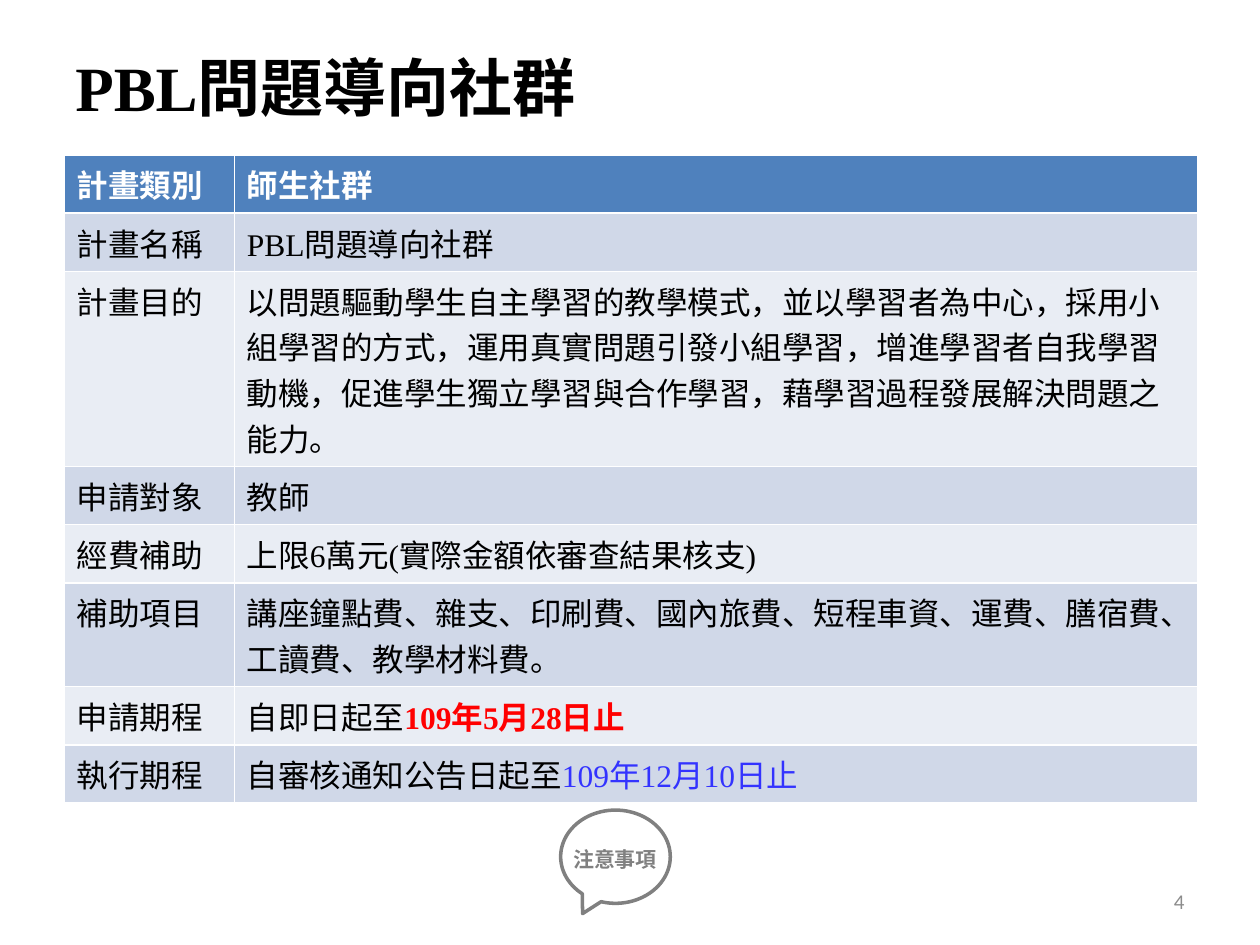
from dataclasses import dataclass
from pptx import Presentation
from pptx.dml.color import RGBColor as Rgb
from pptx.enum.shapes import MSO_SHAPE as Shape
from pptx.enum.text import MSO_ANCHOR as Anchor, PP_ALIGN as Align
from pptx.util import Inches, Pt


@dataclass(frozen=True)
class Theme:
    serif: str = "Times New Roman"
    sans: str = "Calibri"
    cjk: str = "Noto Sans CJK SC"
    black: str = "000000"
    white: str = "FFFFFF"
    gray: str = "808080"
    pale: str = "8C8C8C"
    red: str = "FF0000"
    blue: str = "3333FF"
    head: str = "4F81BD"
    bands: tuple = ("E9EDF4", "D0D8E8")
    title: int = 36
    body: int = 18
    small: int = 12


class Deck:
    """Draws styled elements on the current slide."""

    def __init__(self, theme):
        self.theme = theme
        self.file = Presentation()
        self.file.slide_width, self.file.slide_height = Inches(10), Inches(7.5)
        self.slide = self.file.slides.add_slide(self.file.slide_layouts[6])

    def style(self, font, name, size, color, bold=False):
        font.name, font.size, font.bold = name, Pt(size), bold
        font.color.rgb = Rgb.from_string(color)

    def text(self, home, box, words, name, size, color, bold=False,
             align=Align.LEFT, anchor=Anchor.MIDDLE, wrap=True):
        frame = home.add_textbox(*map(Inches, box)).text_frame
        frame.word_wrap, frame.vertical_anchor = wrap, anchor
        para = frame.paragraphs[0]
        para.text, para.alignment = words, align
        self.style(para.font, name, size, color, bold)

    def cell(self, cell, fill, color, bold, words, accent=None):
        cell.fill.solid()
        cell.fill.fore_color.rgb = Rgb.from_string(fill)
        para = cell.text_frame.paragraphs[0]
        para.text = words
        self.style(para.font, self.theme.serif, self.theme.body, color, bold)
        if accent:
            tail, tint, strong = accent
            run = para.add_run()
            run.text = tail
            run.font.bold = strong
            run.font.color.rgb = Rgb.from_string(tint)

    def table(self, spot, widths, rows):
        t = self.theme
        size = sum(widths), sum(row[0] for row in rows)
        grid = self.slide.shapes.add_table(
            len(rows), len(widths), *map(Inches, spot + size)).table
        for col, width in zip(grid.columns, widths):
            col.width = Inches(width)
        for i, (high, label, *value) in enumerate(rows):
            grid.rows[i].height = Inches(high)
            top = i == 0
            look = (t.head if top else t.bands[i % 2], t.white if top else t.black, top)
            self.cell(grid.cell(i, 0), *look, label)
            self.cell(grid.cell(i, 1), *look, *value)

    def bubble(self, box, words):
        t = self.theme
        home = self.slide.shapes.add_group_shape().shapes
        left, top, width, _ = box
        self.text(home, (left, top + 0.24, width, 0.3), words, t.cjk, t.small,
                  t.gray, True, anchor=Anchor.TOP, wrap=False)
        shape = home.add_shape(Shape.OVAL_CALLOUT, *map(Inches, box))
        shape.adjustments[0], shape.adjustments[1] = -0.3, 0.61
        shape.shadow.inherit = False
        shape.fill.background()
        shape.line.color.rgb = Rgb.from_string(t.gray)
        shape.line.width = Pt(2)


def main():
    t = Theme()
    deck = Deck(t)
    name = "PBL問題導向社群"
    row = 0.41
    deck.table((0.51, 1.23), (1.35, 7.65), [
        (row, "計畫類別", "師生社群"),
        (row, "計畫名稱", name),
        (1.34, "計畫目的", "以問題驅動學生自主學習的教學模式，並以學習者為中心，"
         "採用小組學習的方式，運用真實問題引發小組學習，增進學習者自我學習動機，"
         "促進學生獨立學習與合作學習，藉學習過程發展解決問題之能力。"),
        (row, "申請對象", "教師"),
        (row, "經費補助", "上限6萬元(實際金額依審查結果核支)"),
        (0.72, "補助項目", "講座鐘點費、雜支、印刷費、國內旅費、短程車資、運費、"
         "膳宿費、工讀費、教學材料費。"),
        (row, "申請期程", "自即日起至", ("109年5月28日止", t.red, True)),
        (row, "執行期程", "自審核通知公告日起至", ("109年12月10日止", t.blue, False)),
    ])
    home = deck.slide.shapes
    deck.text(home, (0.5, 0.3, 4.34, 0.77), name, t.serif, t.title, t.black, True)
    deck.text(home, (7.17, 6.95, 2.33, 0.4), "4", t.sans, t.small, t.pale,
              align=Align.RIGHT)
    deck.bubble((4.45, 6.43, 0.87, 0.74), "注意事項")
    deck.file.save("out.pptx")


if __name__ == "__main__":
    main()
